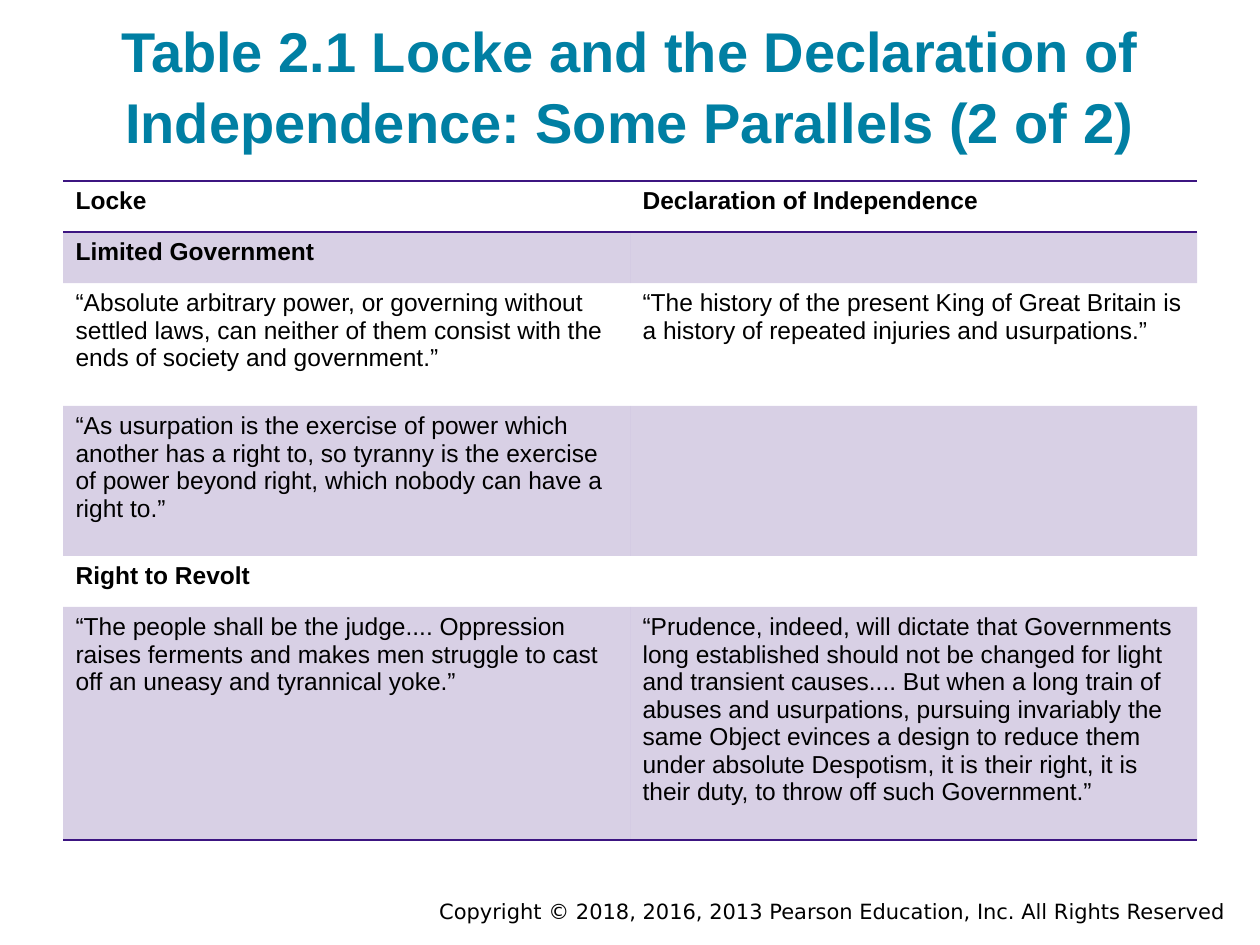
from lxml.etree import SubElement
from pptx import Presentation
from pptx.dml.color import RGBColor
from pptx.enum.text import MSO_ANCHOR, PP_ALIGN
from pptx.oxml import parse_xml
from pptx.oxml.ns import nsdecls, qn
from pptx.util import Pt

SCALE = 914400 / 126
TEAL = RGBColor(0x00, 0x7F, 0xA3)
PURPLE = RGBColor(0x3C, 0x15, 0x81)
BLACK = RGBColor(0, 0, 0)
PLAIN = "{2D5ABB26-0587-4C30-8999-92F81FD0307C}"

# Height in px, whether bold, and the two texts of each row
ROWS = [
    (51, True, "Locke", "Declaration of Independence"),
    (51, True, "Limited Government", ""),
    (123, False,
     "“Absolute arbitrary power, or governing without settled laws, can "
     "neither of them consist with the ends of society and government.”",
     "“The history of the present King of Great Britain is a history of "
     "repeated injuries and usurpations.”"),
    (150, False,
     "“As usurpation is the exercise of power which another has a right to, "
     "so tyranny is the exercise of power beyond right, which nobody can "
     "have a right to.”", ""),
    (51, True, "Right to Revolt", ""),
    (233, False,
     "“The people shall be the judge.... Oppression raises ferments and "
     "makes men struggle to cast off an uneasy and tyrannical yoke.”",
     "“Prudence, indeed, will dictate that Governments long established "
     "should not be changed for light and transient causes.... But when a "
     "long train of abuses and usurpations, pursuing invariably the same "
     "Object evinces a design to reduce them under absolute Despotism, it "
     "is their right, it is their duty, to throw off such Government.”"),
]


def px(n):
    return round(n * SCALE)


def write(frame, text, size=14, font="Arial", color=BLACK, bold=False,
          align=PP_ALIGN.LEFT, anchor=MSO_ANCHOR.TOP, spacing=1.0):
    frame.word_wrap = True
    frame.vertical_anchor = anchor
    para = frame.paragraphs[0]
    para.alignment = align
    para.line_spacing = spacing
    run = para.add_run()
    run.text = text
    run.font.size = Pt(size)
    run.font.name = font
    run.font.bold = bold
    run.font.color.rgb = color


def add_title(slide, box):
    frame = slide.shapes.add_textbox(*map(px, box)).text_frame
    frame.margin_top = frame.margin_bottom = px(13)
    write(frame, "Table 2.1 Locke and the Declaration of Independence: "
          "Some Parallels (2 of 2)", size=32, color=TEAL, bold=True,
          align=PP_ALIGN.CENTER, anchor=MSO_ANCHOR.BOTTOM, spacing=1.06)


def tint(cell):
    """Fill the cell with purple at 20 % opacity."""
    cell.fill.solid()
    cell.fill.fore_color.rgb = PURPLE
    color = cell.fill._xPr.find(qn("a:solidFill"))[0]
    SubElement(color, qn("a:alpha"), val="20000")


def rule(cell, sides):
    """Draw 1 pt lines on the given sides, in the order T, B."""
    props = cell._tc.get_or_add_tcPr()
    for i, side in enumerate(sides):
        props.insert(i, parse_xml(
            f'<a:ln{side} {nsdecls("a")} w="12700"><a:solidFill>'
            f'<a:srgbClr val="{PURPLE}"/></a:solidFill></a:ln{side}>'))


def add_grid(slide, box):
    left, top, width, height = map(px, box)
    table = slide.shapes.add_table(len(ROWS), 2, left, top, width, height).table
    table.first_row = table.horz_banding = False
    table._tbl.tblPr.find(qn("a:tableStyleId")).text = PLAIN
    lines = {0: "TB", len(ROWS) - 1: "B"}
    for i, (tall, bold, *texts) in enumerate(ROWS):
        table.rows[i].height = px(tall)
        for cell, text in zip(table.rows[i].cells, texts):
            if text:
                write(cell.text_frame, text, bold=bold)
            if i % 2:
                tint(cell)
            else:
                cell.fill.background()
            rule(cell, lines.get(i, ""))


def add_footer(slide, box):
    frame = slide.shapes.add_textbox(*map(px, box)).text_frame
    write(frame, "Copyright © 2018, 2016, 2013 Pearson Education, Inc. "
          "All Rights Reserved", size=12, font="DejaVu Sans",
          align=PP_ALIGN.RIGHT)


def main():
    deck = Presentation()
    deck.slide_width, deck.slide_height = px(1260), px(945)
    slide = deck.slides.add_slide(deck.slide_layouts[6])
    add_footer(slide, (252, 892, 986, 38))
    add_title(slide, (63, 19, 1134, 149))
    add_grid(slide, (63, 181, 1134, sum(row[0] for row in ROWS)))
    deck.save("out.pptx")


if __name__ == "__main__":
    main()
